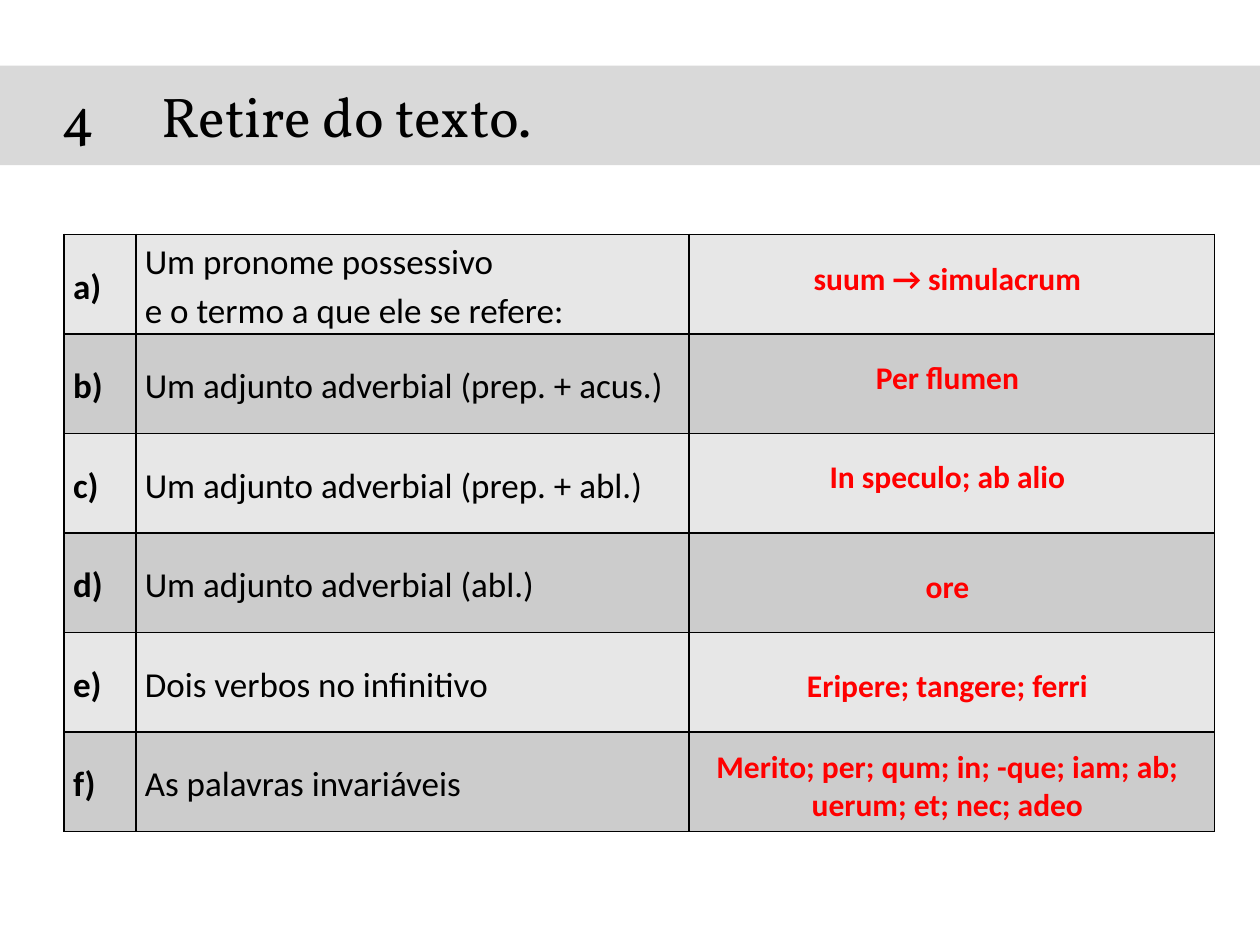
from lxml import etree
from pptx import Presentation
from pptx.dml.color import RGBColor
from pptx.enum.text import MSO_ANCHOR, MSO_AUTO_SIZE, PP_ALIGN
from pptx.oxml.ns import qn
from pptx.util import Inches, Pt

BLACK = RGBColor(0x00, 0x00, 0x00)
RED = RGBColor(0xFF, 0x00, 0x00)
BAND_GREY = RGBColor(0xD9, 0xD9, 0xD9)
ROW_FILLS = (RGBColor(0xE7, 0xE7, 0xE7), RGBColor(0xCC, 0xCC, 0xCC))
LEFT, CENTER = PP_ALIGN.LEFT, PP_ALIGN.CENTER
MIDDLE = MSO_ANCHOR.MIDDLE
NO_AUTOFIT, GROW = MSO_AUTO_SIZE.NONE, MSO_AUTO_SIZE.SHAPE_TO_FIT_TEXT
TITLE_ONLY = 5

COLUMN_WIDTHS = (0.57, 4.39, 4.17)
ROW_HEIGHT = 0.79
QUESTIONS = (
    ("Um pronome possessivo", "e o termo a que ele se refere:"),
    ("Um adjunto adverbial (prep. + acus.)",),
    ("Um adjunto adverbial (prep. + abl.)",),
    ("Um adjunto adverbial (abl.)",),
    ("Dois verbos no infinitivo",),
    ("As palavras invariáveis",),
)
# Answer text, top and height in inches
ANSWERS = (
    ("suum → simulacrum", 2.01, 0.4),
    ("Per flumen", 2.79, 0.4),
    ("In speculo; ab alio", 3.58, 0.4),
    ("ore", 4.45, 0.4),
    ("Eripere; tangere; ferri", 5.24, 0.4),
    ("Merito; per; qum; in; -que; iam; ab; uerum; et; nec; adeo", 5.88, 0.71),
)


def add_run(paragraph, text, size, color, bold=False, font="Calibri"):
    run = paragraph.add_run()
    run.text = text
    run.font.name = font
    run.font.size = Pt(size)
    run.font.bold = bold
    run.font.color.rgb = color


def number_paragraph(paragraph, start, margin, indent):
    props = paragraph._p.get_or_add_pPr()
    props.set("marL", str(Inches(margin)))
    props.set("indent", str(Inches(indent)))
    etree.SubElement(props, qn("a:buFont"), typeface="Vollkorn")
    etree.SubElement(props, qn("a:buAutoNum"), type="arabicPlain",
                     startAt=str(start))


def add_heading(slide, text):
    heading = slide.shapes.title
    heading.left, heading.top = Inches(0), Inches(0.52)
    heading.width, heading.height = Inches(10), Inches(0.79)
    heading.fill.solid()
    heading.fill.fore_color.rgb = BAND_GREY
    frame = heading.text_frame
    frame.auto_size = NO_AUTOFIT
    frame.vertical_anchor = MIDDLE
    paragraph = frame.paragraphs[0]
    paragraph.alignment = LEFT
    number_paragraph(paragraph, 4, 1.18, -0.79)
    add_run(paragraph, text, 32, BLACK, font="Vollkorn")


def add_borders(cell):
    props = cell._tc.get_or_add_tcPr()
    # Borders come before the fill in the cell properties
    for position, side in enumerate(("lnL", "lnR", "lnT", "lnB")):
        line = etree.Element(qn(f"a:{side}"), w=str(Pt(1)))
        fill = etree.SubElement(line, qn("a:solidFill"))
        etree.SubElement(fill, qn("a:srgbClr"), val=str(BLACK))
        props.insert(position, line)


def fill_cell(cell, lines, color, bold=False):
    cell.fill.solid()
    cell.fill.fore_color.rgb = color
    add_borders(cell)
    cell.vertical_anchor = MIDDLE
    cell.margin_left = cell.margin_right = Inches(0.07)
    cell.margin_top = cell.margin_bottom = Inches(0)
    frame = cell.text_frame
    for index, line in enumerate(lines):
        paragraph = frame.add_paragraph() if index else frame.paragraphs[0]
        paragraph.line_spacing = 1.15
        add_run(paragraph, line, 20, BLACK, bold)


def add_question_table(slide):
    table = slide.shapes.add_table(
        len(QUESTIONS), len(COLUMN_WIDTHS), Inches(0.51), Inches(1.86),
        Inches(sum(COLUMN_WIDTHS)), Inches(ROW_HEIGHT * len(QUESTIONS))).table
    table.first_row = table.horz_banding = False
    for column, width in zip(table.columns, COLUMN_WIDTHS):
        column.width = Inches(width)
    for index, (letter, question) in enumerate(zip("abcdef", QUESTIONS)):
        table.rows[index].height = Inches(ROW_HEIGHT)
        color = ROW_FILLS[index % 2]
        fill_cell(table.cell(index, 0), (f"{letter})",), color, bold=True)
        fill_cell(table.cell(index, 1), question, color)
        fill_cell(table.cell(index, 2), (), color)


def add_answer(slide, text, top, height):
    answer = slide.shapes.add_textbox(
        Inches(5.55), Inches(top), Inches(3.94), Inches(height))
    frame = answer.text_frame
    frame.word_wrap = True
    frame.auto_size = GROW
    paragraph = frame.paragraphs[0]
    paragraph.alignment = CENTER
    add_run(paragraph, text, 18, RED, bold=True)


def main():
    prs = Presentation()
    prs.slide_width, prs.slide_height = Inches(10), Inches(7.5)
    slide = prs.slides.add_slide(prs.slide_layouts[TITLE_ONLY])

    # Numbered heading on a grey band
    add_heading(slide, "Retire do texto.")

    # Questions, with the answers laid over the last column
    add_question_table(slide)
    for text, top, height in ANSWERS:
        add_answer(slide, text, top, height)

    prs.save("out.pptx")


if __name__ == "__main__":
    main()
